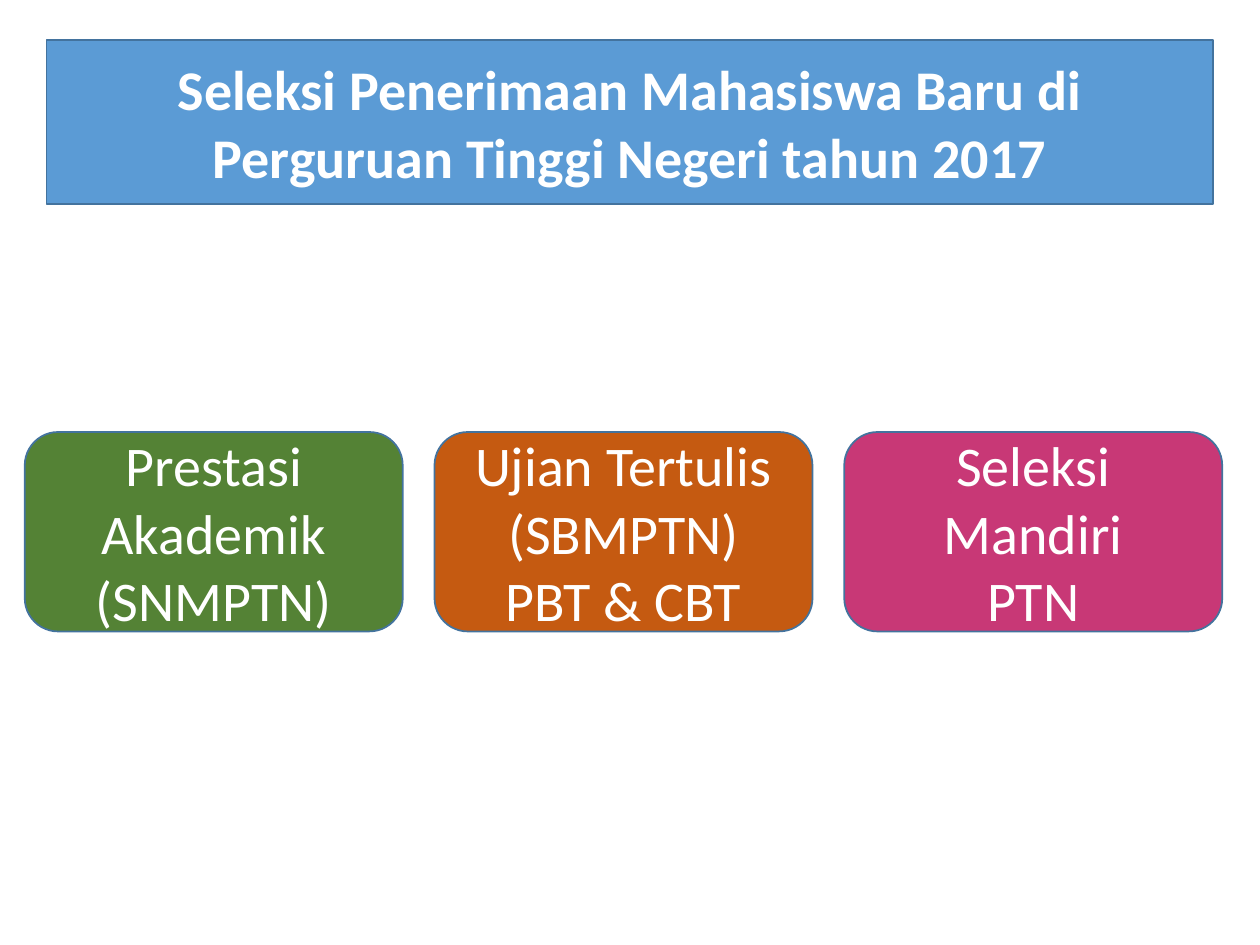
from lxml import etree
from pptx import Presentation
from pptx.dml.color import RGBColor
from pptx.enum.shapes import MSO_SHAPE
from pptx.enum.text import MSO_ANCHOR, MSO_AUTO_SIZE, PP_ALIGN
from pptx.oxml.ns import qn
from pptx.util import Cm, Pt

ROUNDED = MSO_SHAPE.ROUNDED_RECTANGLE
MIDDLE = MSO_ANCHOR.MIDDLE
CENTER = PP_ALIGN.CENTER
FIT_SHAPE = MSO_AUTO_SIZE.SHAPE_TO_FIT_TEXT
NO_FIT = MSO_AUTO_SIZE.NONE

COLORS = {
    "blue": "5B9BD5",
    "green": "548235",
    "orange": "C55A11",
    "pink": "C83876",
    "outline": "43739E",
    "white": "FFFFFF",
}
TITLE = "Seleksi Penerimaan Mahasiswa Baru di Perguruan Tinggi Negeri tahun 2017"
PATHWAYS = [
    ("Prestasi Akademik (SNMPTN)", "green"),
    ("Ujian Tertulis (SBMPTN)\nPBT & CBT", "orange"),
    ("Seleksi Mandiri\vPTN", "pink"),
]
CARD_LEFT, CARD_TOP = 0.5, 8.71
CARD_WIDTH, CARD_HEIGHT = 7.62, 4.02
CARD_STEP = 8.26


def color(name):
    return RGBColor.from_string(COLORS[name])


def style_box(sp, text, fill, bold=False, auto_size=NO_FIT):
    sp.fill.solid()
    sp.fill.fore_color.rgb = color(fill)
    sp.line.color.rgb = color("outline")
    sp.line.width = Pt(1)
    tf = sp.text_frame
    tf.text = text
    tf.word_wrap = True
    tf.auto_size = auto_size
    tf.vertical_anchor = MIDDLE
    for p in tf.paragraphs:
        p.alignment = CENTER
        p.font.name = "Calibri"
        p.font.size = Pt(32)
        p.font.bold = bold
        p.font.color.rgb = color("white")


def add_title(s):
    sp = s.shapes.title
    sp.left, sp.top, sp.width, sp.height = Cm(0.94), Cm(0.81), Cm(23.52), Cm(3.3)
    geometry = etree.SubElement(sp.element.spPr, qn("a:prstGeom"), prst="roundRect")
    etree.SubElement(geometry, qn("a:avLst"))
    style_box(sp, TITLE, "blue", bold=True, auto_size=FIT_SHAPE)


def add_pathways(s):
    for i, (text, fill) in enumerate(PATHWAYS):
        sp = s.shapes.add_shape(
            ROUNDED, Cm(CARD_LEFT + i * CARD_STEP), Cm(CARD_TOP),
            Cm(CARD_WIDTH), Cm(CARD_HEIGHT))
        sp.shadow.inherit = False
        style_box(sp, text, fill)


def main():
    """Build the slide on university admission pathways."""
    prs = Presentation()
    prs.slide_width, prs.slide_height = Cm(25.4), Cm(19.05)
    s = prs.slides.add_slide(prs.slide_layouts[5])
    add_title(s)
    add_pathways(s)
    prs.save("out.pptx")


if __name__ == "__main__":
    main()
